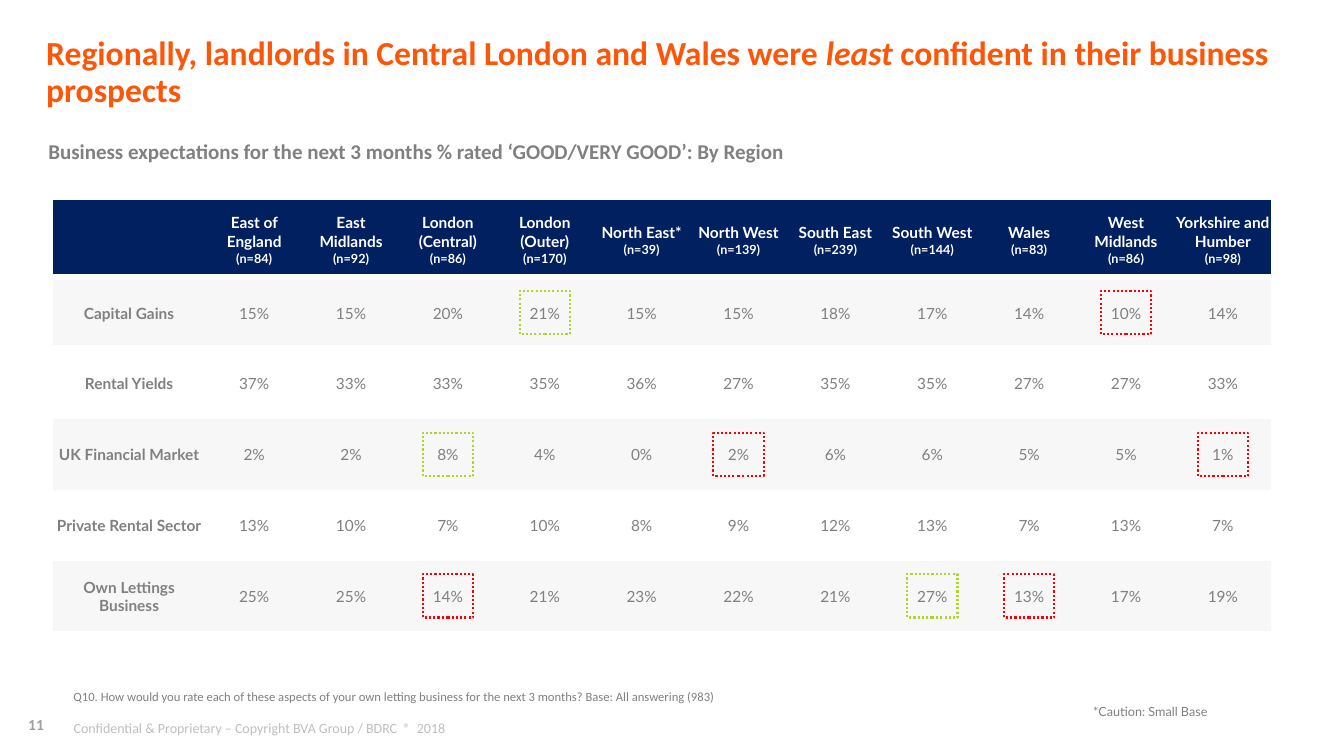
"""Build the slide on landlords' regional business expectations."""
from copy import deepcopy

from pptx import Presentation
from pptx.dml.color import RGBColor
from pptx.enum.dml import MSO_LINE
from pptx.enum.shapes import MSO_SHAPE
from pptx.enum.text import MSO_ANCHOR, MSO_AUTO_SIZE, PP_ALIGN as AL
from pptx.oxml import parse_xml
from pptx.oxml.ns import nsdecls
from pptx.util import Pt

NAVY, ORANGE, GREY, WHITE = "002060", "FD5608", "808080", "FFFFFF"
BAND, PALE, MID, GREEN, RED = "F7F7F7", "BFBFBF", "9F9F9F", "AFD52C", "F90004"
NO_STYLE = "{2D5ABB26-0587-4C30-8999-92F81FD0307C}"

LEFT, TOP, LABEL_W, COL_W, HEAD_H, ROW_H = 37.5, 144, 109.5, 69.2, 54, 50.6
REGIONS = [
    ("East of England", 84), ("East Midlands", 92), ("London (Central)", 86),
    ("London (Outer)", 170), ("North East*", 39), ("North West", 139),
    ("South East", 239), ("South West", 144), ("Wales", 83),
    ("West Midlands", 86), ("Yorkshire and Humber", 98),
]
RATINGS = [
    ("Capital Gains", [15, 15, 20, 21, 15, 15, 18, 17, 14, 10, 14]),
    ("Rental Yields", [37, 33, 33, 35, 36, 27, 35, 35, 27, 27, 33]),
    ("UK Financial Market", [2, 2, 8, 4, 0, 2, 6, 6, 5, 5, 1]),
    ("Private Rental Sector", [13, 10, 7, 10, 8, 9, 12, 13, 7, 13, 7]),
    ("Own Lettings Business", [25, 25, 14, 21, 23, 22, 21, 27, 13, 17, 19]),
]
MARKERS = [(1, 4, GREEN), (5, 3, RED), (3, 3, GREEN), (3, 6, RED),
           (5, 8, GREEN), (5, 9, RED), (1, 10, RED), (3, 11, RED)]


def rgb(color):
    return RGBColor.from_string(color)


def add_text(p, text, size=11, color=GREY, font="Calibri", bold=False, italic=False):
    r = p.add_run()
    r.text = text
    f = r.font
    f.size, f.name, f.bold, f.italic = Pt(size), font, bold, italic
    f.color.rgb = rgb(color)
    return r


class SlideBuilder:
    """Holds the slide and its style, and adds each kind of element."""

    def __init__(self, prs, layout):
        self.s = prs.slides.add_slide(prs.slide_layouts[layout])
        self.table_font = "Lato"

    def frame(self, sp, box, inset=(0, 0), anchor=MSO_ANCHOR.MIDDLE, align=AL.LEFT, wrap=True):
        sp.left, sp.top, sp.width, sp.height = (Pt(v) for v in box)
        tf = sp.text_frame
        tf.auto_size, tf.word_wrap, tf.vertical_anchor = MSO_AUTO_SIZE.NONE, wrap, anchor
        tf.margin_left = tf.margin_right = Pt(inset[0])
        tf.margin_top = tf.margin_bottom = Pt(inset[1])
        p = tf.paragraphs[0]
        p.alignment = align
        return p

    def placeholder(self, idx, box):
        p = self.frame(self.s.placeholders[idx], box)
        p.line_spacing, p.space_before = 0.9, Pt(0)
        return p

    def text_box(self, box, **layout):
        sp = self.s.shapes.add_textbox(0, 0, 0, 0)
        return self.frame(sp, box, **layout)

    def drop_empty(self):
        for sp in list(self.s.placeholders):
            if not sp.text_frame.text:
                sp.element.getparent().remove(sp.element)

    def table(self, rows, cols):
        width, height = LABEL_W + COL_W * (cols - 1), HEAD_H + ROW_H * (rows - 1)
        tbl = self.s.shapes.add_table(
            rows, cols, Pt(LEFT), Pt(TOP), Pt(width), Pt(height)).table
        tbl.first_row = tbl.horz_banding = False
        tbl._tbl.tblPr[0].text = NO_STYLE
        for i, col in enumerate(tbl.columns):
            col.width = Pt(COL_W if i else LABEL_W)
        for i, row in enumerate(tbl.rows):
            row.height = Pt(ROW_H if i else HEAD_H)
        return tbl

    def cell(self, cell, fill=None, borders=()):
        cell.vertical_anchor = MSO_ANCHOR.MIDDLE
        cell.margin_left = cell.margin_right = cell.margin_top = Pt(0.75)
        cell.margin_bottom = Pt(0)
        if fill:
            cell.fill.solid()
            cell.fill.fore_color.rgb = rgb(fill)
        else:
            cell.fill.background()
        for i, (side, color, width) in enumerate(borders):
            cell._tc.tcPr.insert(i, parse_xml(
                f'<a:ln{side} {nsdecls("a")} w="{Pt(width)}"><a:solidFill>'
                f'<a:srgbClr val="{color}"/></a:solidFill></a:ln{side}>'))
        p = cell.text_frame.paragraphs[0]
        p.alignment = AL.CENTER
        return p

    def header(self, tbl):
        borders = [("T", NAVY, 3), ("B", WHITE, 4.5)]
        self.cell(tbl.cell(0, 0), NAVY, borders)
        style = dict(color=WHITE, font=self.table_font, bold=True)
        for c, (region, base) in enumerate(REGIONS, 1):
            p = self.cell(tbl.cell(0, c), NAVY, borders)
            r = add_text(p, region, **style)
            p.add_line_break()
            p._p[-1].append(deepcopy(r._r.rPr))
            add_text(p, f"(n={base})", size=9, **style)

    def ratings(self, tbl):
        borders = {1: [("T", WHITE, 4.5)], len(RATINGS): [("B", WHITE, 0.5)]}
        for i, (label, values) in enumerate(RATINGS, 1):
            for c, text in enumerate([label] + [f"{v}%" for v in values]):
                p = self.cell(tbl.cell(i, c), BAND if i % 2 else None, borders.get(i, ()))
                add_text(p, text, font=self.table_font, bold=c == 0)

    def marker(self, row, col, color, w=36, h=30.75):
        x = LEFT + LABEL_W + COL_W * (col - 0.5) - w / 2
        y = TOP + HEAD_H + ROW_H * (row - 0.5) - h / 2
        sp = self.s.shapes.add_shape(MSO_SHAPE.RECTANGLE, Pt(x), Pt(y), Pt(w), Pt(h))
        sp.shadow.inherit = False
        sp.fill.background()
        sp.line.color.rgb = rgb(color)
        sp.line.width = Pt(1.5)
        sp.line.dash_style = MSO_LINE.ROUND_DOT


def main():
    prs = Presentation()
    prs.slide_width, prs.slide_height = Pt(960), Pt(540)
    b = SlideBuilder(prs, 4)

    p = b.placeholder(0, (33, 26, 903, 52.5))
    title = dict(size=24, color=ORANGE, bold=True)
    add_text(p, "Regionally, landlords in Central London and Wales were ", **title)
    add_text(p, "least", italic=True, **title)
    add_text(p, " confident in their business prospects", **title)

    p = b.placeholder(1, (34.5, 93.5, 761, 31))
    add_text(p, "Business expectations for the next 3 months % rated ‘GOOD/VERY GOOD’: By Region",
             size=15, bold=True)
    p = b.placeholder(3, (52.5, 487.5, 741.5, 21.5))
    add_text(p, "Q10. How would you rate each of these aspects of your own letting business "
             "for the next 3 months? Base: All answering (983)", size=9)
    b.drop_empty()

    p = b.text_box((11, 504.5, 29.5, 26), align=AL.CENTER, wrap=False)
    add_text(p, "11", color=MID, bold=True)
    p = b.text_box((45.5, 510.5, 816, 17.5), inset=(7.2, 3.6), anchor=MSO_ANCHOR.TOP)
    add_text(p, "Confidential & Proprietary – Copyright BVA Group / BDRC  ®  2018",
             size=10, color=PALE)
    p = b.text_box((722, 499.5, 147.5, 18), inset=(7.2, 3.6), anchor=MSO_ANCHOR.TOP,
                   align=AL.RIGHT)
    add_text(p, "*Caution: Small Base", size=9, font="Lato")

    tbl = b.table(len(RATINGS) + 1, len(REGIONS) + 1)
    b.header(tbl)
    b.ratings(tbl)
    for row, col, color in MARKERS:
        b.marker(row, col, color)

    prs.save("out.pptx")


if __name__ == "__main__":
    main()
